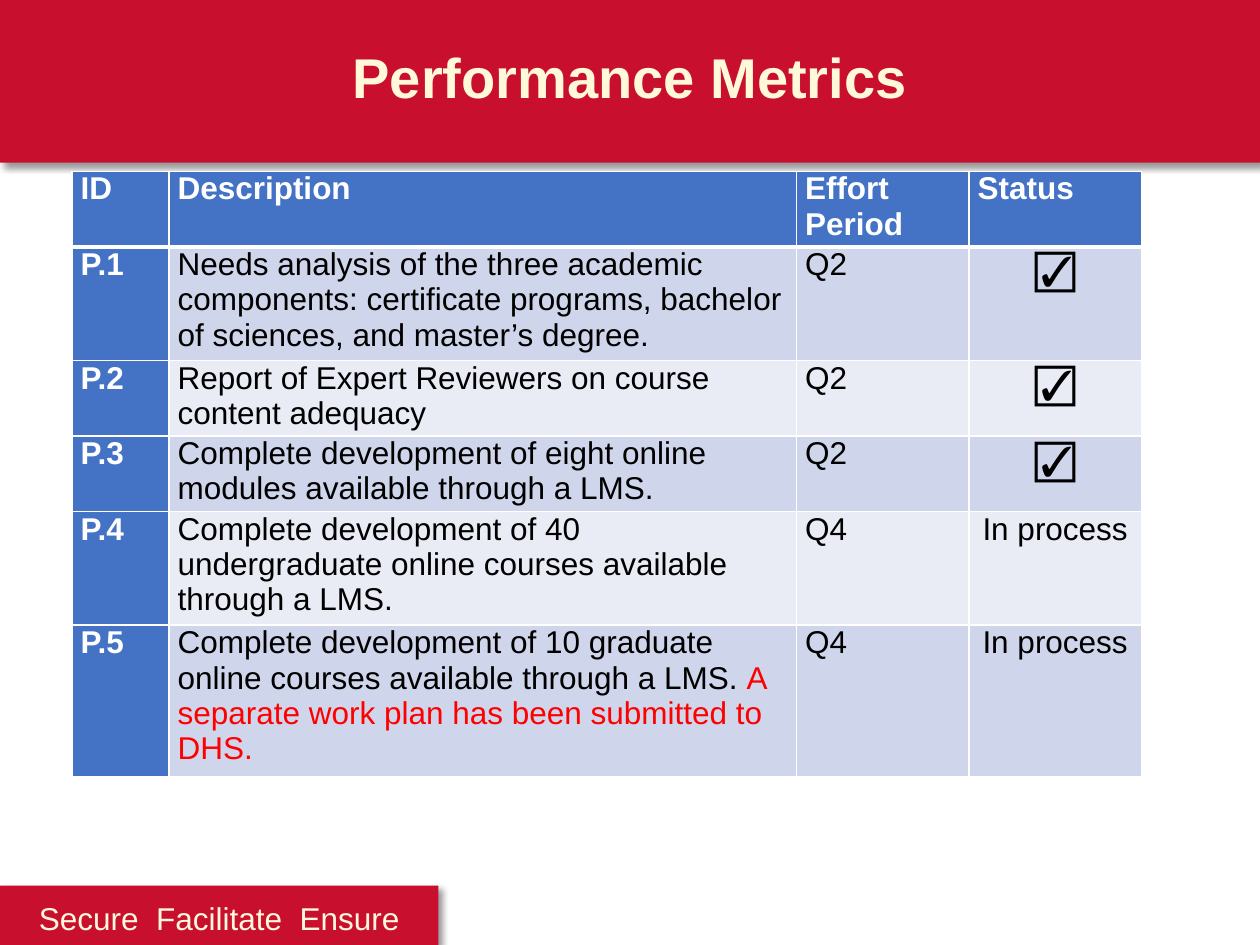
"""Build the Performance Metrics slide."""
from lxml.etree import SubElement
from pptx import Presentation
from pptx.dml.color import RGBColor
from pptx.enum.shapes import MSO_SHAPE
from pptx.enum.text import PP_ALIGN as Align
from pptx.oxml.ns import qn
from pptx.util import Inches, Pt

COLORS = {"red": "C8102E", "cream": "FFF9D9", "blue": "4472C4", "band": "CFD5EA",
          "light": "E9EBF5", "white": "FFFFFF", "black": "000000", "alert": "FF0000"}
FONT = "Arial"
BANNERS = [(0, 0, 10, 1.29), (0, 7.03, 3.48, 0.47)]
LABELS = [
    ("Performance Metrics", (2, 0.29, 6, 0.64), 32, True, 1),
    ("Secure  Facilitate  Ensure", (0, 7.03, 3.48, 0.47), 18, False, 1.19),
]
HEADERS = ["ID", "Description", "Effort Period", "Status"]
METRICS = [
    ("P.1", "Needs analysis of the three academic components: certificate programs, "
            "bachelor of sciences, and master’s degree.", "Q2", "☑"),
    ("P.2", "Report of Expert Reviewers on course content adequacy", "Q2", "☑"),
    ("P.3", "Complete development of eight online modules available through a LMS.", "Q2", "☑"),
    ("P.4", "Complete development of 40 undergraduate online courses available through a LMS.",
     "Q4", "In process"),
    ("P.5", "Complete development of 10 graduate online courses available through a LMS. ",
     "Q4", "In process"),
]
ALERT = "A separate work plan has been submitted to DHS."
COLUMN_WIDTHS = [0.77, 4.98, 1.37, 1.37]
ROW_HEIGHTS = [0.6, 0.9, 0.6, 0.6, 0.9, 1.2]
TABLE_LEFT, TABLE_TOP = 0.57, 1.36


def color(name):
    return RGBColor.from_string(COLORS[name])


def style(paragraph, size, color_name, bold=False, align=Align.LEFT):
    paragraph.alignment = align
    font = paragraph.font
    font.name, font.size, font.bold = FONT, Pt(size), bold
    font.color.rgb = color(color_name)


def add_banner(slide, box):
    banner = slide.shapes.add_shape(MSO_SHAPE.RECTANGLE, *map(Inches, box))
    banner.fill.solid()
    banner.fill.fore_color.rgb = color("red")
    banner.line.fill.background()
    banner.shadow.inherit = False
    effects = banner._element.spPr.find(qn("a:effectLst"))
    shadow = SubElement(effects, qn("a:outerShdw"), blurRad=str(Pt(4)), dist=str(Pt(3)),
                        dir="2700000", algn="tl", rotWithShape="0")
    black = SubElement(shadow, qn("a:srgbClr"), val=COLORS["black"])
    SubElement(black, qn("a:alpha"), val="40000")


def add_label(slide, text, box, size, bold, spacing):
    frame = slide.shapes.add_textbox(*map(Inches, box)).text_frame
    frame.word_wrap = True
    paragraph = frame.paragraphs[0]
    paragraph.text = text
    paragraph.line_spacing = spacing
    style(paragraph, size, "cream", bold, Align.CENTER)


def add_borders(cell, row):
    properties = cell._tc.get_or_add_tcPr()
    widths = {"L": 1, "R": 1, "T": 3 if row == 1 else 1, "B": 3 if row == 0 else 1}
    for side, width in widths.items():
        line = SubElement(properties, qn(f"a:ln{side}"), w=str(Pt(width)))
        fill = SubElement(line, qn("a:solidFill"))
        SubElement(fill, qn("a:srgbClr"), val=COLORS["white"])


def fill_cell(cell, text, row, column):
    heading = row == 0 or column == 0
    cell.margin_left = cell.margin_right = Inches(0.07)
    cell.margin_top = cell.margin_bottom = 0
    add_borders(cell, row)
    cell.fill.solid()
    cell.fill.fore_color.rgb = color("blue" if heading else "band" if row % 2 else "light")
    paragraph = cell.text_frame.paragraphs[0]
    paragraph.text = text
    centered = row > 0 and column == len(HEADERS) - 1
    style(paragraph, 24 if text == "☑" else 18, "white" if heading else "black",
          heading, Align.CENTER if centered else Align.LEFT)


def add_metrics_table(slide):
    rows = [HEADERS, *METRICS]
    table = slide.shapes.add_table(
        len(rows), len(HEADERS), Inches(TABLE_LEFT), Inches(TABLE_TOP),
        Inches(sum(COLUMN_WIDTHS)), Inches(sum(ROW_HEIGHTS))).table
    for column, width in zip(table.columns, COLUMN_WIDTHS):
        column.width = Inches(width)
    for row, height in zip(table.rows, ROW_HEIGHTS):
        row.height = Inches(height)
    for row, texts in enumerate(rows):
        for column, text in enumerate(texts):
            fill_cell(table.cell(row, column), text, row, column)
    alert = table.cell(len(METRICS), 1).text_frame.paragraphs[0].add_run()
    alert.text = ALERT
    alert.font.color.rgb = color("alert")


def main():
    presentation = Presentation()
    presentation.slide_width, presentation.slide_height = Inches(10), Inches(7.5)
    slide = presentation.slides.add_slide(presentation.slide_layouts[6])
    for box in BANNERS:
        add_banner(slide, box)
    for label in LABELS:
        add_label(slide, *label)
    add_metrics_table(slide)
    presentation.save("out.pptx")


if __name__ == "__main__":
    main()
